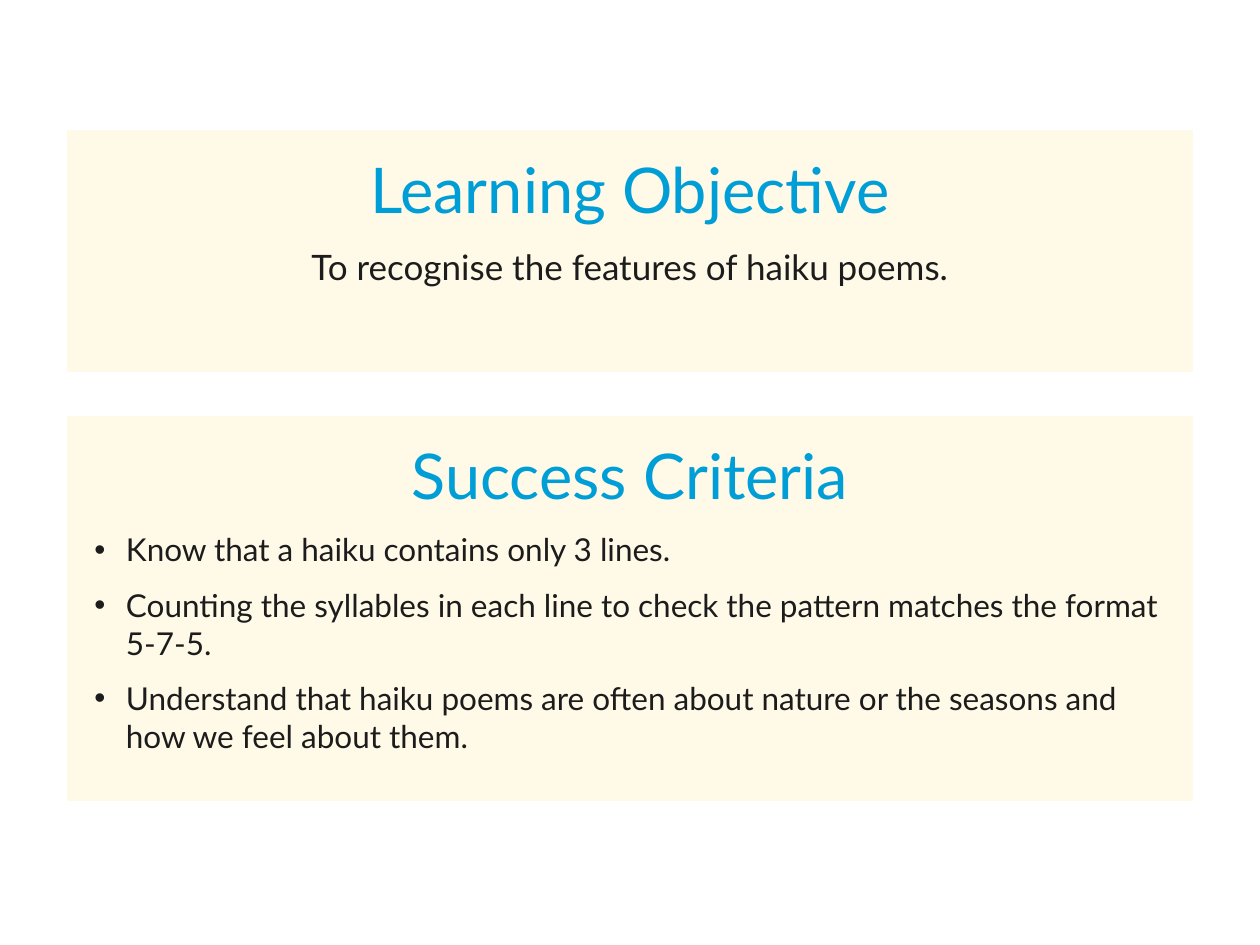
from dataclasses import dataclass

from lxml import etree
from pptx import Presentation
from pptx.dml.color import RGBColor
from pptx.enum import shapes, text
from pptx.oxml.ns import qn
from pptx.util import Pt

HEX = {"panel": "FFF9E7", "edge": "FFFFFF", "head": "009ED6", "body": "1C1C1C"}
FONT = "Lato"
LEFT, WIDE = 37.44, 645.12
INNER, SPAN = 54, 612
HANG = 18


@dataclass
class Panel:
    top: float
    high: float
    head: str


@dataclass
class Style:
    size: float
    color: str
    align: text.PP_ALIGN = text.PP_ALIGN.CENTER
    line: float = 1.0
    bullet: bool = False
    pad: tuple = (0, 0, 0, 0)


HEAD = Style(36, "head", line=0.9, pad=(20.16, 17.28, 20.16, 14.4))
GOAL = Style(20, "body")
LIST = Style(18, "body", align=text.PP_ALIGN.LEFT, bullet=True)

PANELS = [
    Panel(73.44, 140.4, "Learning Objective"),
    Panel(236.88, 221.76, "Success Criteria"),
]
CRITERIA = [
    "Know that a haiku contains only 3 lines.",
    "Counting the syllables in each line to check the pattern matches the format 5-7-5.",
    "Understand that haiku poems are often about nature or the seasons and how we feel about them.",
]


def rgb(name: str) -> RGBColor:
    return RGBColor.from_string(HEX[name])


def draw_panel(slide, panel: Panel) -> None:
    box = slide.shapes.add_shape(
        shapes.MSO_SHAPE.ROUNDED_RECTANGLE,
        Pt(LEFT), Pt(panel.top), Pt(WIDE), Pt(panel.high))
    box.adjustments[0] = 0
    box.shadow.inherit = False
    box.fill.solid()
    box.fill.fore_color.rgb = rgb("panel")
    box.line.color.rgb = rgb("edge")
    box.line.width = Pt(2)
    # Slight transparency
    tint = box._element.spPr.find(qn("a:solidFill"))[0]
    etree.SubElement(tint, qn("a:alpha"), val="95000")


def add_bullet(para) -> None:
    props = para._p.get_or_add_pPr()
    props.set("marL", str(Pt(HANG)))
    props.set("indent", str(-Pt(HANG)))
    etree.SubElement(props, qn("a:buFont"), typeface="Arial")
    etree.SubElement(props, qn("a:buChar"), char="•")


def write(box, lines: list[str], style: Style) -> None:
    frame = box.text_frame
    frame.word_wrap = True
    frame.auto_size = text.MSO_AUTO_SIZE.NONE
    frame.vertical_anchor = text.MSO_ANCHOR.TOP
    (frame.margin_left, frame.margin_top,
     frame.margin_right, frame.margin_bottom) = map(Pt, style.pad)
    for i, line in enumerate(lines):
        para = frame.add_paragraph() if i else frame.paragraphs[0]
        para.text = line
        if style.bullet:
            add_bullet(para)
        para.alignment = style.align
        para.line_spacing = style.line
        para.space_before = Pt(10 if i else 0)
        para.font.name = FONT
        para.font.size = Pt(style.size)
        para.font.color.rgb = rgb(style.color)


def add_text(slide, top: float, high: float, lines: list[str], style: Style) -> None:
    box = slide.shapes.add_textbox(Pt(INNER), Pt(top), Pt(SPAN), Pt(high))
    write(box, lines, style)


def main() -> None:
    deck = Presentation()
    deck.slide_width, deck.slide_height = Pt(720), Pt(540)
    slide = deck.slides.add_slide(deck.slide_layouts[5])
    title = slide.shapes.title

    # Panels
    for panel in PANELS:
        draw_panel(slide, panel)

    # Criteria and objective
    add_text(slide, 303.12, 141.84, CRITERIA, LIST)
    add_text(slide, 140.4, 23.04, ["To recognise the features of haiku poems."], GOAL)

    # Headings, with the title placeholder brought to the front
    title._element.getparent().append(title._element)
    second = slide.shapes.add_textbox(0, 0, 0, 0)
    for box, panel in zip((title, second), PANELS):
        box.left, box.top = Pt(LEFT), Pt(panel.top)
        box.width, box.height = Pt(WIDE), Pt(54.72)
        write(box, [panel.head], HEAD)

    deck.save("out.pptx")


if __name__ == "__main__":
    main()
